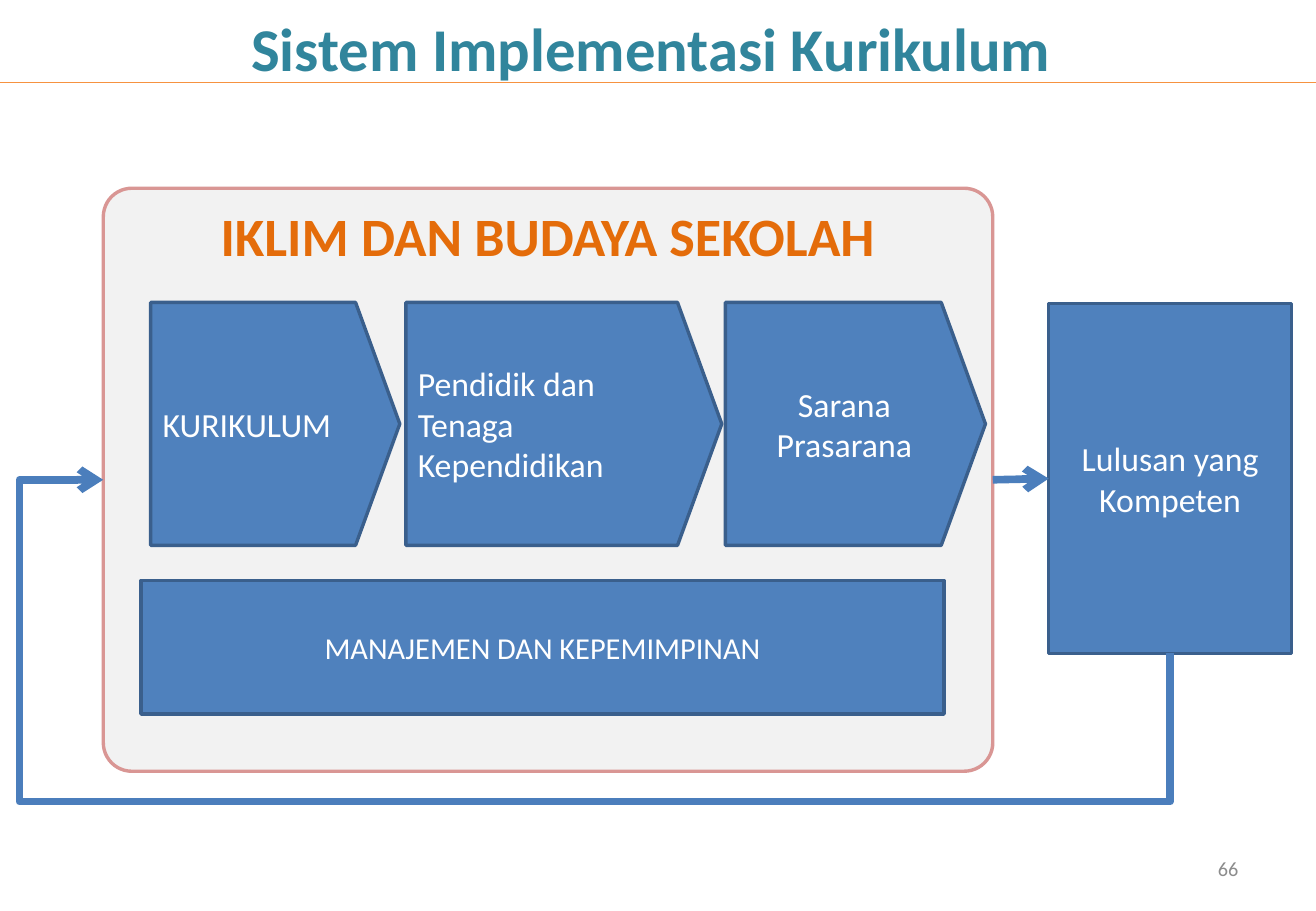
from lxml.etree import SubElement
from pptx import Presentation
from pptx.dml.color import RGBColor
from pptx.enum.shapes import MSO_CONNECTOR, MSO_SHAPE
from pptx.enum.text import MSO_ANCHOR, PP_ALIGN
from pptx.oxml.ns import qn
from pptx.util import Inches, Pt

COLORS = {
    "panel": "F2F2F2", "panel_edge": "D99694", "panel_text": "E46C0A",
    "box": "4F81BD", "box_edge": "3A5F8C", "box_text": "FFFFFF",
    "title": "31859C", "rule": "F69240", "arrow": "4B7EBC", "number": "8C8C8C",
}
FONT = "Calibri"
SLIDE_W, SLIDE_H = 10.83, 7.5

TITLE = "Sistem Implementasi Kurikulum "
CLIMATE = "IKLIM DAN BUDAYA SEKOLAH"
# text, left, width, alignment
STAGES = [
    ("KURIKULUM", 1.24, 2.05, PP_ALIGN.LEFT),
    ("Pendidik dan Tenaga Kependidikan", 3.34, 2.6, PP_ALIGN.LEFT),
    ("Sarana Prasarana", 5.97, 2.14, PP_ALIGN.CENTER),
]
MANAGEMENT = "MANAJEMEN DAN KEPEMIMPINAN"
GRADUATES = "Lulusan yang Kompeten"
PAGE_NUMBER = "66"

# left, top, width, height
TITLE_AREA = (0, 0.05, SLIDE_W, 0.67)
PANEL_AREA = (0.85, 1.55, 7.32, 4.8)
STAGE_TOP, STAGE_H = 2.49, 2
MANAGEMENT_AREA = (1.16, 4.78, 6.61, 1.1)
GRADUATES_AREA = (8.63, 2.5, 2, 2.88)
NUMBER_AREA = (7.76, 6.95, 2.53, 0.4)
RULE_Y = 0.68
LOOP_LEFT, LOOP_BOTTOM = 0.16, 6.6


def rgb(name):
    return RGBColor.from_string(COLORS[name])


def write(shape, text, size, color, align=PP_ALIGN.CENTER,
          anchor=MSO_ANCHOR.MIDDLE, bold=False):
    frame = shape.text_frame
    frame.text = text
    frame.word_wrap = True
    frame.vertical_anchor = anchor
    paragraph = frame.paragraphs[0]
    paragraph.alignment = align
    font = paragraph.runs[0].font
    font.name, font.size, font.bold = FONT, Pt(size), bold
    font.color.rgb = rgb(color)


def add_block(slide, kind, area, fill=None, edge=None, adjust=None):
    block = slide.shapes.add_shape(kind, *map(Inches, area))
    block.shadow.inherit = False
    if adjust is not None:
        block.adjustments[0] = adjust
    if fill:
        block.fill.solid()
        block.fill.fore_color.rgb = rgb(fill)
    else:
        block.fill.background()
    if edge:
        block.line.color.rgb = rgb(edge)
        block.line.width = Pt(2)
    else:
        block.line.fill.background()
    return block


def style_line(line, color, width, arrow=False):
    line.line.color.rgb = rgb(color)
    line.line.width = Pt(width)
    if arrow:
        SubElement(line.line._get_or_add_ln(), qn("a:tailEnd"), type="arrow")


def add_line(slide, start, end, color, width, arrow=False):
    line = slide.shapes.add_connector(
        MSO_CONNECTOR.STRAIGHT, *map(Inches, start + end))
    style_line(line, color, width, arrow)
    SubElement(line._element.spPr, qn("a:effectLst"))


def add_feedback_loop(slide, points):
    """Draw an open, bent arrow through the points."""
    start, *rest = [(Inches(x), Inches(y)) for x, y in points]
    builder = slide.shapes.build_freeform(*start, scale=1.0)
    builder.add_line_segments(rest, close=False)
    loop = builder.convert_to_shape()
    loop.fill.background()
    style_line(loop, "arrow", 4.5, arrow=True)
    loop.shadow.inherit = False


def main():
    deck = Presentation()
    deck.slide_width, deck.slide_height = Inches(SLIDE_W), Inches(SLIDE_H)
    slide = deck.slides.add_slide(deck.slide_layouts[6])

    panel = add_block(slide, MSO_SHAPE.ROUNDED_RECTANGLE, PANEL_AREA,
                      "panel", "panel_edge", 0.049)
    write(panel, CLIMATE, 32, "panel_text", anchor=MSO_ANCHOR.TOP, bold=True)

    for text, left, width, align in STAGES:
        stage = add_block(slide, MSO_SHAPE.PENTAGON,
                          (left, STAGE_TOP, width, STAGE_H),
                          "box", "box_edge", 0.182)
        write(stage, text, 20, "box_text", align)

    for text, area, size in [(MANAGEMENT, MANAGEMENT_AREA, 18),
                             (GRADUATES, GRADUATES_AREA, 20)]:
        box = add_block(slide, MSO_SHAPE.RECTANGLE, area, "box", "box_edge")
        write(box, text, size, "box_text")

    title = add_block(slide, MSO_SHAPE.ROUNDED_RECTANGLE, TITLE_AREA)
    write(title, TITLE, 36, "title", bold=True)
    add_line(slide, (0, RULE_Y), (SLIDE_W, RULE_Y), "rule", 0.75)

    number = slide.shapes.add_textbox(*map(Inches, NUMBER_AREA))
    write(number, PAGE_NUMBER, 12, "number", PP_ALIGN.RIGHT)

    panel_left, panel_top, panel_w, panel_h = PANEL_AREA
    out_left, out_top, out_w, out_h = GRADUATES_AREA
    panel_mid = panel_top + panel_h / 2
    out_center = out_left + out_w / 2
    add_feedback_loop(slide, [
        (out_center, out_top + out_h), (out_center, LOOP_BOTTOM),
        (LOOP_LEFT, LOOP_BOTTOM), (LOOP_LEFT, panel_mid),
        (panel_left, panel_mid)])
    add_line(slide, (panel_left + panel_w, panel_mid),
             (out_left, out_top + out_h / 2), "arrow", 4.5, arrow=True)

    deck.save("out.pptx")


if __name__ == "__main__":
    main()
